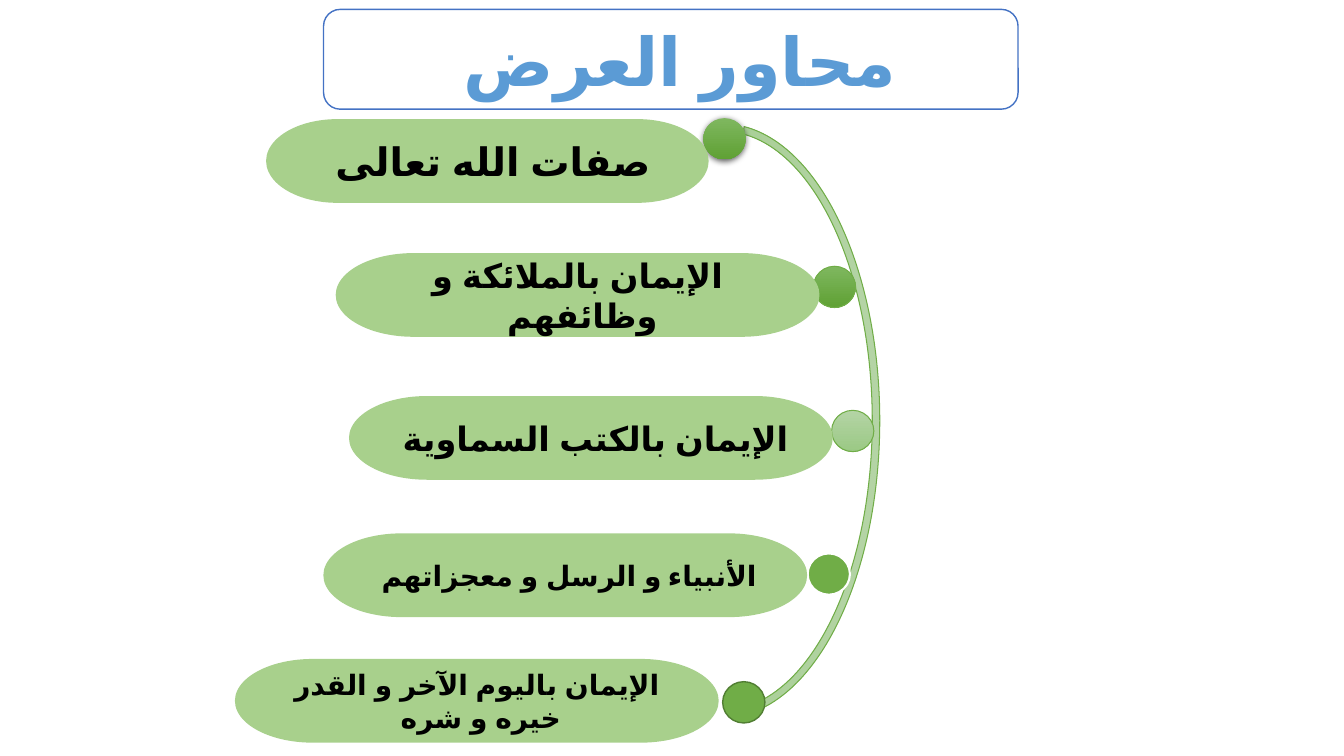
from lxml import etree
from pptx import Presentation
from pptx.dml.color import RGBColor as RGB
from pptx.enum.lang import MSO_LANGUAGE_ID as LANG
from pptx.enum.shapes import MSO_SHAPE as SHP
from pptx.enum.text import MSO_ANCHOR as ANC, PP_ALIGN as AL
from pptx.oxml.ns import qn
from pptx.util import Pt

COLORS = {
    "white": "FFFFFF", "black": "000000", "border": "4472C4", "title": "5B9BD5",
    "pill": "A8D08C", "green": "70AD47", "dark": "517E33",
    "pale_top": "B4D4A5", "pale_bottom": "9BC985",
    "rich_top": "7FB75F", "rich_bottom": "5FA134",
}
PALE = ("pale_top", "pale_bottom")
RICH = ("rich_top", "rich_bottom")


def rgb(name):
    return RGB.from_string(COLORS[name])


class AgendaSlide:
    font = {"name": "Calibri", "language_id": LANG.ARABIC}
    frame = {"word_wrap": True, "vertical_anchor": ANC.MIDDLE,
             "margin_left": Pt(7.2), "margin_right": Pt(7.2),
             "margin_top": Pt(3.6), "margin_bottom": Pt(3.6)}

    def __init__(self, prs):
        self.slide = prs.slides.add_slide(prs.slide_layouts[6])

    def shape(self, kind, box, fill, line=None):
        """fill: colour name or (top, bottom); line: (colour name, width)."""
        s = self.slide.shapes.add_shape(kind, *map(Pt, box))
        s.shadow.inherit = False
        if isinstance(fill, tuple):
            s.fill.gradient()
            s.fill.gradient_angle = 270
            for stop, name in zip(s.fill.gradient_stops, fill):
                stop.color.rgb = rgb(name)
        else:
            s.fill.solid()
            s.fill.fore_color.rgb = rgb(fill)
        if line:
            s.line.color.rgb = rgb(line[0])
            s.line.width = Pt(line[1])
        else:
            s.line.fill.background()
        return s

    def text(self, s, runs):
        """runs: (text, size, colour name, bold), set right to left."""
        tf = s.text_frame
        for key, value in self.frame.items():
            setattr(tf, key, value)
        p = tf.paragraphs[0]
        p.alignment = AL.CENTER
        p._p.get_or_add_pPr().set("rtl", "1")
        for words, size, color, bold in runs:
            r = p.add_run()
            r.text = words
            for key, value in {**self.font, "size": Pt(size), "bold": bold}.items():
                setattr(r.font, key, value)
            r.font.color.rgb = rgb(color)

    def title(self, box, words):
        s = self.shape(SHP.ROUNDED_RECTANGLE, box, "white", ("border", 1))
        self.text(s, [(words, 48, "title", True)])

    def arc(self, box, adjustments):
        s = self.shape(SHP.BLOCK_ARC, box, PALE, ("green", 0.75))
        s.rotation = 90
        for i, value in enumerate(adjustments):
            s.adjustments[i] = value

    def dot(self, left, top, fill, line):
        s = self.shape(SHP.OVAL, (left, top, 30.2, 29.5), fill, line)
        if not line:
            self.drop_shadow(s)

    def drop_shadow(self, s):
        effects = s._element.spPr.find(qn("a:effectLst"))
        shadow = etree.SubElement(effects, qn("a:outerShdw"), blurRad=str(Pt(4.5)),
                                  dist=str(Pt(1.5)), dir="5400000", rotWithShape="0")
        color = etree.SubElement(shadow, qn("a:srgbClr"), val=COLORS["black"])
        etree.SubElement(color, qn("a:alpha"), val="63000")

    def pill(self, left, top, width, runs):
        s = self.shape(SHP.FLOWCHART_TERMINATOR, (left, top, width, 59.8), "pill")
        self.text(s, runs)


def main():
    prs = Presentation()
    prs.slide_width, prs.slide_height = Pt(960), Pt(540)
    agenda = AgendaSlide(prs)

    # Title and arc
    agenda.title((231.1, 6.7, 496.1, 71.3), "محاور العرض ")
    agenda.arc((304.4, 188.6, 424.1, 223.9), (110.454, 211.063, 0.024))

    # Dots along the arc
    for dot in [
        (502.4, 84.4, RICH, None),
        (581, 190.2, RICH, ("green", 0.75)),
        (594, 293.1, PALE, ("green", 0.75)),
        (576.9, 395.3, "green", ("white", 1.5)),
        (516.2, 486.9, "green", ("dark", 1)),
    ]:
        agenda.dot(*dot)

    # Topics
    def bold(words, size):
        return words, size, "black", True

    for topic in [
        (190.1, 85.1, 316.1, [bold("صفات الله تعالى ", 28)]),
        (239.8, 180.8, 345.6, [bold("الإيمان بالملائكة و وظائفهم ", 24)]),
        (249.3, 282.9, 345.6, [bold("الإيمان بالكتب السماوية ", 24)]),
        (231, 381, 345.6, [bold("الأنبياء", 20), (" ", 18, "white", False),
                           bold("و الرسل و معجزاتهم ", 20)]),
        (167.8, 470.7, 345.6, [bold("الإيمان باليوم الآخر و القدر خيره و شره ", 20)]),
    ]:
        agenda.pill(*topic)

    prs.save("out.pptx")


if __name__ == "__main__":
    main()
